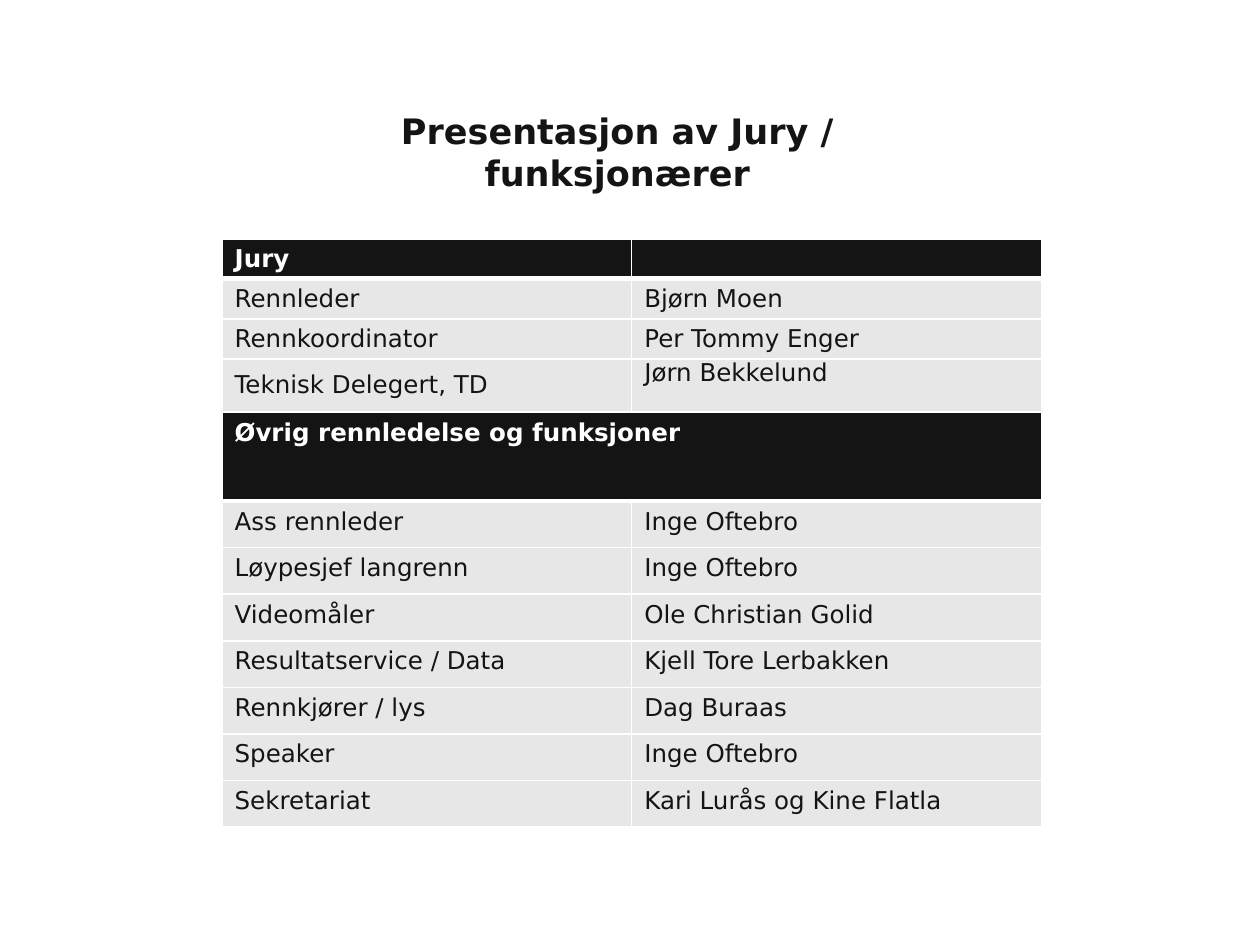
from dataclasses import dataclass

from lxml.etree import SubElement
from pptx import Presentation
from pptx.dml.color import RGBColor
from pptx.enum.text import MSO_ANCHOR as Anchor, MSO_AUTO_SIZE as AutoSize, PP_ALIGN as Align
from pptx.oxml.ns import qn
from pptx.util import Pt


@dataclass(frozen=True)
class Theme:
    font: str = "DejaVu Sans"
    ink: str = "131413"
    paper: str = "FFFFFF"
    row: str = "E7E7E7"
    title_size: int = 20
    cell_size: int = 14
    thin: int = 1
    thick: int = 3


THEME = Theme()
TABLE_LEFT = 126.9
COLUMN_WIDTH = 234.1

JURY = [
    ("Jury", ""),
    ("Rennleder", "Bjørn Moen"),
    ("Rennkoordinator", "Per Tommy Enger"),
    ("Teknisk Delegert, TD", "Jørn Bekkelund"),
]
OFFICIALS = [
    ("Øvrig rennledelse og funksjoner", ""),
    ("Ass rennleder", "Inge Oftebro"),
    ("Løypesjef langrenn", "Inge Oftebro"),
    ("Videomåler", "Ole Christian Golid"),
    ("Resultatservice / Data", "Kjell Tore Lerbakken"),
    ("Rennkjører / lys", "Dag Buraas"),
    ("Speaker", "Inge Oftebro"),
    ("Sekretariat", "Kari Lurås og Kine Flatla"),
]


def style_paragraph(paragraph, size, color, bold, align):
    paragraph.alignment = align
    font = paragraph.font
    font.name = THEME.font
    font.size = Pt(size)
    font.bold = bold
    font.color.rgb = RGBColor.from_string(color)


def add_borders(cell, top, bottom):
    properties = cell._tc.get_or_add_tcPr()
    widths = {"L": THEME.thin, "R": THEME.thin, "T": top, "B": bottom}
    for side, width in widths.items():
        line = SubElement(properties, qn(f"a:ln{side}"), w=str(Pt(width)))
        fill = SubElement(line, qn("a:solidFill"))
        SubElement(fill, qn("a:srgbClr"), val=THEME.paper)


def format_cell(cell, text, row_index, anchor, inset):
    header = row_index == 0
    cell.text = text
    cell.vertical_anchor = anchor
    cell.margin_left = cell.margin_right = Pt(7.2)
    cell.margin_top = cell.margin_bottom = Pt(inset)
    add_borders(
        cell,
        top=THEME.thick if row_index == 1 else THEME.thin,
        bottom=THEME.thick if header else THEME.thin,
    )
    cell.fill.solid()
    cell.fill.fore_color.rgb = RGBColor.from_string(THEME.ink if header else THEME.row)
    style_paragraph(cell.text_frame.paragraphs[0], THEME.cell_size,
                    THEME.paper if header else THEME.ink, header, Align.LEFT)


def add_roster(slide, people, top, heights, anchor, inset):
    frame = slide.shapes.add_table(len(people), 2, Pt(TABLE_LEFT), Pt(top),
                                   Pt(2 * COLUMN_WIDTH), Pt(sum(heights)))
    roster = frame.table
    roster.horz_banding = False
    for column in roster.columns:
        column.width = Pt(COLUMN_WIDTH)
    for row_index, (names, height) in enumerate(zip(people, heights)):
        roster.rows[row_index].height = Pt(height)
        for column_index, text in enumerate(names):
            format_cell(roster.cell(row_index, column_index), text, row_index, anchor, inset)
    return roster


def set_title(slide, text):
    title = slide.shapes.title
    title.left, title.top, title.width, title.height = Pt(177.8), Pt(59), Pt(350), Pt(55.4)
    title.text = text
    frame = title.text_frame
    frame.word_wrap = True
    frame.auto_size = AutoSize.SHAPE_TO_FIT_TEXT
    frame.vertical_anchor = Anchor.TOP
    style_paragraph(frame.paragraphs[0], THEME.title_size, THEME.ink, True, Align.CENTER)


def main():
    deck = Presentation()
    deck.slide_width, deck.slide_height = Pt(720), Pt(540)
    slide = deck.slides.add_slide(deck.slide_layouts[5])

    set_title(slide, "Presentasjon av Jury / funksjonærer")

    jury = add_roster(slide, JURY, 137, [22.3, 22.9, 22.9, 30], Anchor.MIDDLE, 0)
    jury.cell(3, 1).vertical_anchor = Anchor.TOP

    officials = add_roster(slide, OFFICIALS, 235.4, [51] + [26.6] * 7, Anchor.TOP, 3.6)
    officials.cell(0, 0).merge(officials.cell(0, 1))

    deck.save("out.pptx")


if __name__ == "__main__":
    main()
